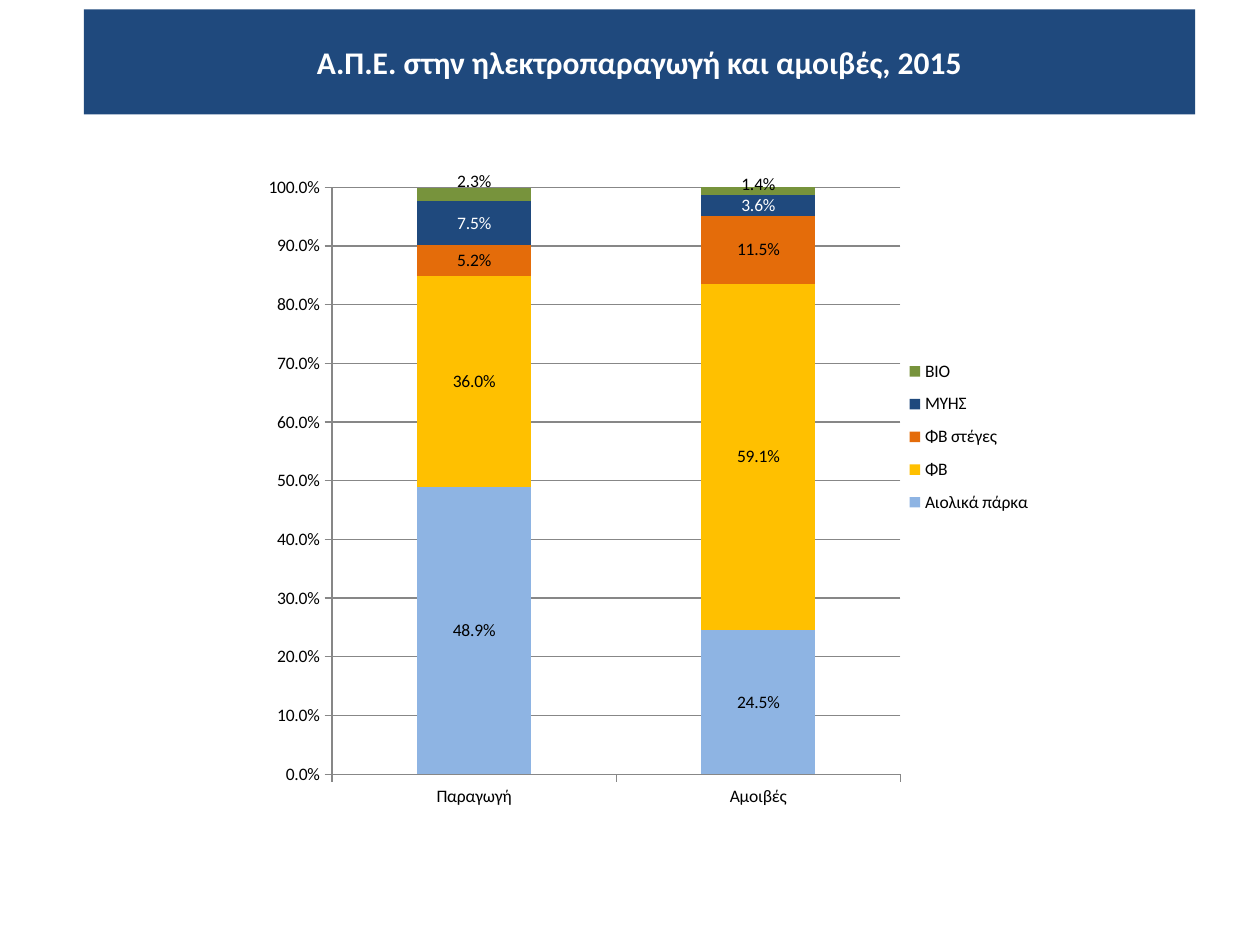
from typing import NamedTuple

from lxml.etree import SubElement
from pptx import Presentation
from pptx.chart.data import CategoryChartData
from pptx.dml.color import RGBColor
from pptx.enum.chart import (XL_CHART_TYPE, XL_LABEL_POSITION,
                             XL_LEGEND_POSITION, XL_TICK_MARK)
from pptx.enum.text import MSO_ANCHOR, MSO_AUTO_SIZE, PP_ALIGN
from pptx.oxml import parse_xml
from pptx.oxml.ns import nsdecls, qn
from pptx.util import Pt

NAVY = RGBColor(0x1F, 0x49, 0x7D)
LIGHT_BLUE = RGBColor(0x8E, 0xB4, 0xE3)
YELLOW = RGBColor(0xFF, 0xC0, 0x00)
ORANGE = RGBColor(0xE4, 0x6C, 0x0A)
GREEN = RGBColor(0x77, 0x93, 0x3C)
GREY = RGBColor(0x87, 0x87, 0x87)
BLACK = RGBColor(0, 0, 0)
WHITE = RGBColor(0xFF, 0xFF, 0xFF)
FONT = "Calibri"
PERCENT = "0.0%"


class Source(NamedTuple):
    name: str
    shares: tuple[float, float]
    color: RGBColor
    label_color: RGBColor = BLACK
    label_shifts: tuple[float, ...] = ()  # vertical, as fractions of the chart


CATEGORIES = ("Παραγωγή", "Αμοιβές")
SOURCES = (
    Source("Αιολικά πάρκα", (0.489, 0.245), LIGHT_BLUE),
    Source("ΦΒ", (0.36, 0.591), YELLOW),
    Source("ΦΒ στέγες", (0.052, 0.115), ORANGE),
    Source("ΜΥΗΣ", (0.075, 0.036), NAVY, WHITE),
    Source("ΒΙΟ", (0.023, 0.014), GREEN, BLACK, (-0.02, -0.01)),
)


def make_layout(**settings):
    """Manual chart layout; each setting is one child element."""
    layout = parse_xml(f"<c:layout {nsdecls('c')}/>")
    manual = SubElement(layout, qn("c:manualLayout"))
    for tag, value in settings.items():
        SubElement(manual, qn(f"c:{tag}")).set("val", str(value))
    return layout


def set_layout(element, layout) -> None:
    for old in element.findall(qn("c:layout")):
        element.remove(old)
    # The layout follows legendPos or idx; in the plot area it comes first
    lead = element.find(qn("c:legendPos"))
    if lead is None:
        lead = element.find(qn("c:idx"))
    if lead is None:
        element.insert(0, layout)
    else:
        lead.addnext(layout)


def add_title(s, text: str) -> None:
    sp = s.shapes.title
    sp.left, sp.top, sp.width, sp.height = Pt(48), Pt(20.8), Pt(635), Pt(29)
    sp.fill.solid()
    sp.fill.fore_color.rgb = NAVY
    tf = sp.text_frame
    tf.text = text
    tf.auto_size = MSO_AUTO_SIZE.SHAPE_TO_FIT_TEXT
    tf.vertical_anchor = MSO_ANCHOR.MIDDLE
    p = tf.paragraphs[0]
    p.alignment = PP_ALIGN.CENTER
    font = p.runs[0].font
    font.name, font.size, font.bold = FONT, Pt(18), True
    font.color.rgb = WHITE


def style_series(series, source: Source) -> None:
    series.format.fill.solid()
    series.format.fill.fore_color.rgb = source.color
    labels = series.data_labels
    labels.show_value = True
    labels.number_format = PERCENT
    labels.number_format_is_linked = False
    labels.position = XL_LABEL_POSITION.CENTER
    labels.font.size = Pt(10)
    labels.font.color.rgb = source.label_color
    # Labels of thin segments are nudged upwards
    for i, shift in enumerate(source.label_shifts):
        series.points[i].data_label.position = XL_LABEL_POSITION.CENTER
        label = labels._element.findall(qn("c:dLbl"))[i]
        set_layout(label, make_layout(x=0, y=shift))


def add_share_chart(s) -> None:
    data = CategoryChartData(number_format=PERCENT)
    data.categories = CATEGORIES
    for source in SOURCES:
        data.add_series(source.name, source.shares)
    chart = s.shapes.add_chart(XL_CHART_TYPE.COLUMN_STACKED, Pt(144.7),
                               Pt(94.3), Pt(459.4), Pt(374.4), data).chart
    chart.has_title = False
    chart.font.name, chart.font.size = FONT, Pt(10)
    chart.font.color.rgb = BLACK

    plot = chart.plots[0]
    plot.gap_width, plot.overlap = 150, 100
    for series, source in zip(plot.series, SOURCES):
        style_series(series, source)

    # Axes
    values = chart.value_axis
    values.minimum_scale, values.maximum_scale, values.major_unit = 0, 1, 0.1
    values.tick_labels.number_format = PERCENT
    values.tick_labels.number_format_is_linked = False
    values.has_major_gridlines = True
    values.major_gridlines.format.line.color.rgb = GREY
    values.major_gridlines.format.line.width = Pt(0.75)
    for axis in (values, chart.category_axis):
        axis.major_tick_mark = XL_TICK_MARK.OUTSIDE
        axis.format.line.color.rgb = GREY
        axis.format.line.width = Pt(0.75)

    # Legend and plot positions
    chart.has_legend = True
    chart.legend.position = XL_LEGEND_POSITION.RIGHT
    chart.legend.include_in_layout = False
    set_layout(chart.legend._element,
               make_layout(xMode="edge", yMode="edge",
                           x=0.79, y=0.28, w=0.2, h=0.27))
    plot_area = chart._chartSpace.find(".//" + qn("c:plotArea"))
    set_layout(plot_area,
               make_layout(layoutTarget="inner", xMode="edge", yMode="edge",
                           x=0.098, y=0.034, w=0.707, h=0.896))


def main() -> None:
    prs = Presentation()
    prs.slide_width, prs.slide_height = Pt(720), Pt(540)
    s = prs.slides.add_slide(prs.slide_layouts[5])
    add_title(s, "Α.Π.Ε. στην ηλεκτροπαραγωγή και αμοιβές, 2015")
    add_share_chart(s)
    prs.save("out.pptx")


if __name__ == "__main__":
    main()
